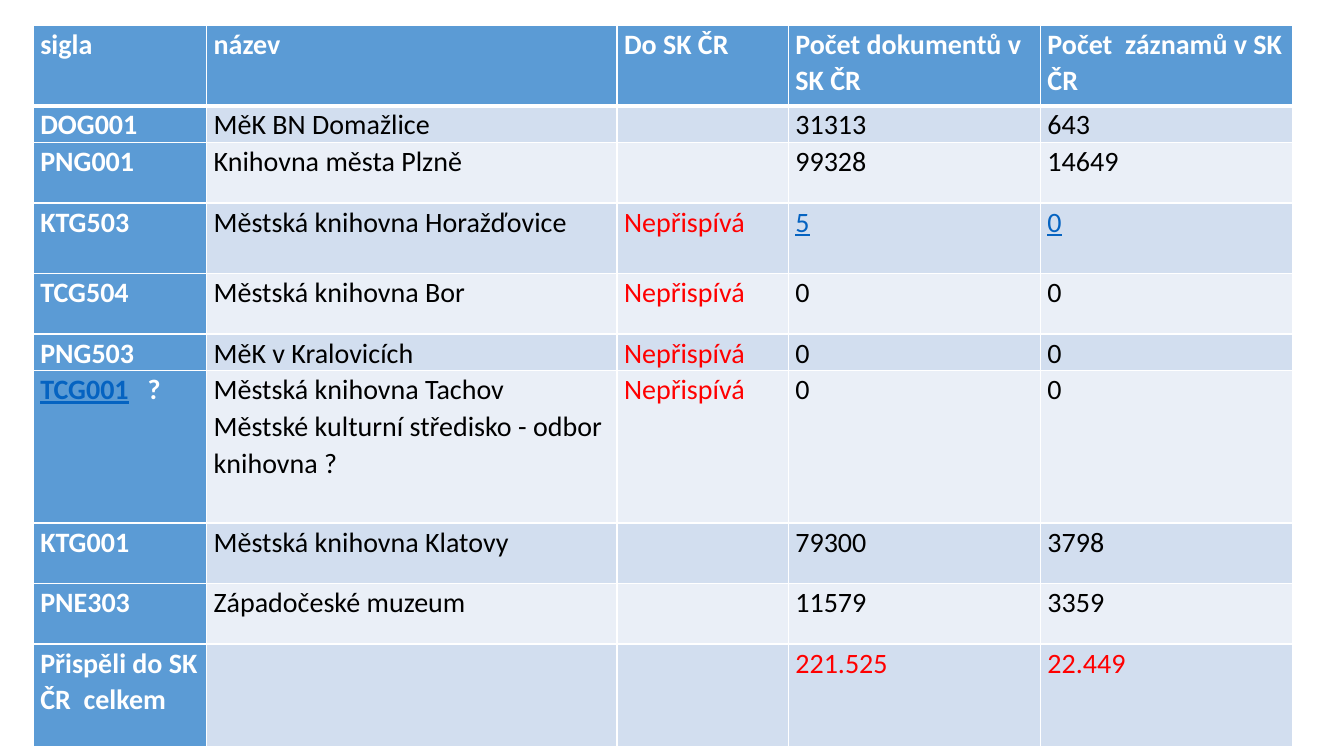
from lxml.etree import SubElement
from pptx import Presentation
from pptx.dml.color import RGBColor
from pptx.oxml.ns import qn
from pptx.util import Inches, Pt

WHITE, BLACK, RED, LINK = "FFFFFF", "000000", "FF0000", "0563C1"
HEADER_FILL, BAND_FILLS = "5B9BD5", ("D2DEEF", "EAEFF7")

COLUMN_WIDTHS = (1.72, 4.07, 1.7, 2.5, 2.5)
ROW_HEIGHTS = (0.8, 0.35, 0.6, 0.7, 0.6, 0.35, 1.51, 0.6, 0.6, 1.02)

# A cell is plain text, or a list of (text, colour) spans
MISSING = [("Nepřispívá", RED)]
LIBRARIES = (
    ("sigla", "název", "Do SK ČR", "Počet dokumentů v SK ČR", "Počet  záznamů v SK ČR"),
    ("DOG001", "MěK BN Domažlice", "", "31313", "643"),
    ("PNG001", "Knihovna města Plzně", "", "99328", "14649"),
    ("KTG503", "Městská knihovna Horažďovice", MISSING, [("5", LINK)], [("0", LINK)]),
    ("TCG504", "Městská knihovna Bor", MISSING, "0", "0"),
    ("PNG503", "MěK v Kralovicích", MISSING, "0", "0"),
    ([("TCG001", LINK), ("   ?", WHITE)],
     "Městská knihovna Tachov\nMěstské kulturní středisko - odbor knihovna ?",
     MISSING, "0", "0"),
    ("KTG001", "Městská knihovna Klatovy", "", "79300", "3798"),
    ("PNE303", "Západočeské muzeum", "", "11579", "3359"),
    ("Přispěli do SK ČR  celkem", "", "", [("221.525", RED)], [("22.449", RED)]),
)


def colour(value):
    return RGBColor.from_string(value)


def set_borders(cell, widths):
    properties = cell._tc.get_or_add_tcPr()
    for side, width in widths.items():
        line = SubElement(properties, qn(f"a:ln{side}"), w=str(Pt(width)))
        fill = SubElement(line, qn("a:solidFill"))
        SubElement(fill, qn("a:srgbClr"), val=WHITE)


def write_cell(cell, content, text_colour, bold):
    cell.margin_left = cell.margin_right = Inches(0.07)
    cell.margin_top = cell.margin_bottom = 0
    if isinstance(content, str):
        cell.text_frame.text = content
    else:
        for text, span_colour in content:
            span = cell.text_frame.paragraphs[0].add_run()
            span.text = text
            span.font.color.rgb = colour(span_colour)
            span.font.underline = span_colour == LINK
    for para in cell.text_frame.paragraphs:
        para.line_spacing = 1.07
        for span in para.runs:
            span.font.name = "Calibri"
            span.font.size = Pt(20)
            span.font.bold = bold
            if isinstance(content, str):
                span.font.color.rgb = colour(text_colour)


def add_library_table(page, left, top):
    frame = page.shapes.add_table(
        len(LIBRARIES), len(COLUMN_WIDTHS), Inches(left), Inches(top),
        Inches(sum(COLUMN_WIDTHS)), Inches(sum(ROW_HEIGHTS)))
    table = frame.table
    table.first_col = True
    for column, width in zip(table.columns, COLUMN_WIDTHS):
        column.width = Inches(width)
    for row, height in zip(table.rows, ROW_HEIGHTS):
        row.height = Inches(height)

    for row_index, contents in enumerate(LIBRARIES):
        for column_index, content in enumerate(contents):
            cell = table.cell(row_index, column_index)
            heading = row_index == 0 or column_index == 0
            write_cell(cell, content, WHITE if heading else BLACK, heading)
            # A thicker rule separates the header row
            set_borders(cell, {"L": 1, "R": 1,
                               "T": 3 if row_index == 1 else 1,
                               "B": 3 if row_index == 0 else 1})
            cell.fill.solid()
            band = BAND_FILLS[(row_index - 1) % 2]
            cell.fill.fore_color.rgb = colour(HEADER_FILL if heading else band)


def main():
    deck = Presentation()
    deck.slide_width, deck.slide_height = Inches(13.33), Inches(7.5)
    page = deck.slides.add_slide(deck.slide_layouts[6])
    add_library_table(page, 0.33, 0.25)
    deck.save("out.pptx")


if __name__ == "__main__":
    main()
